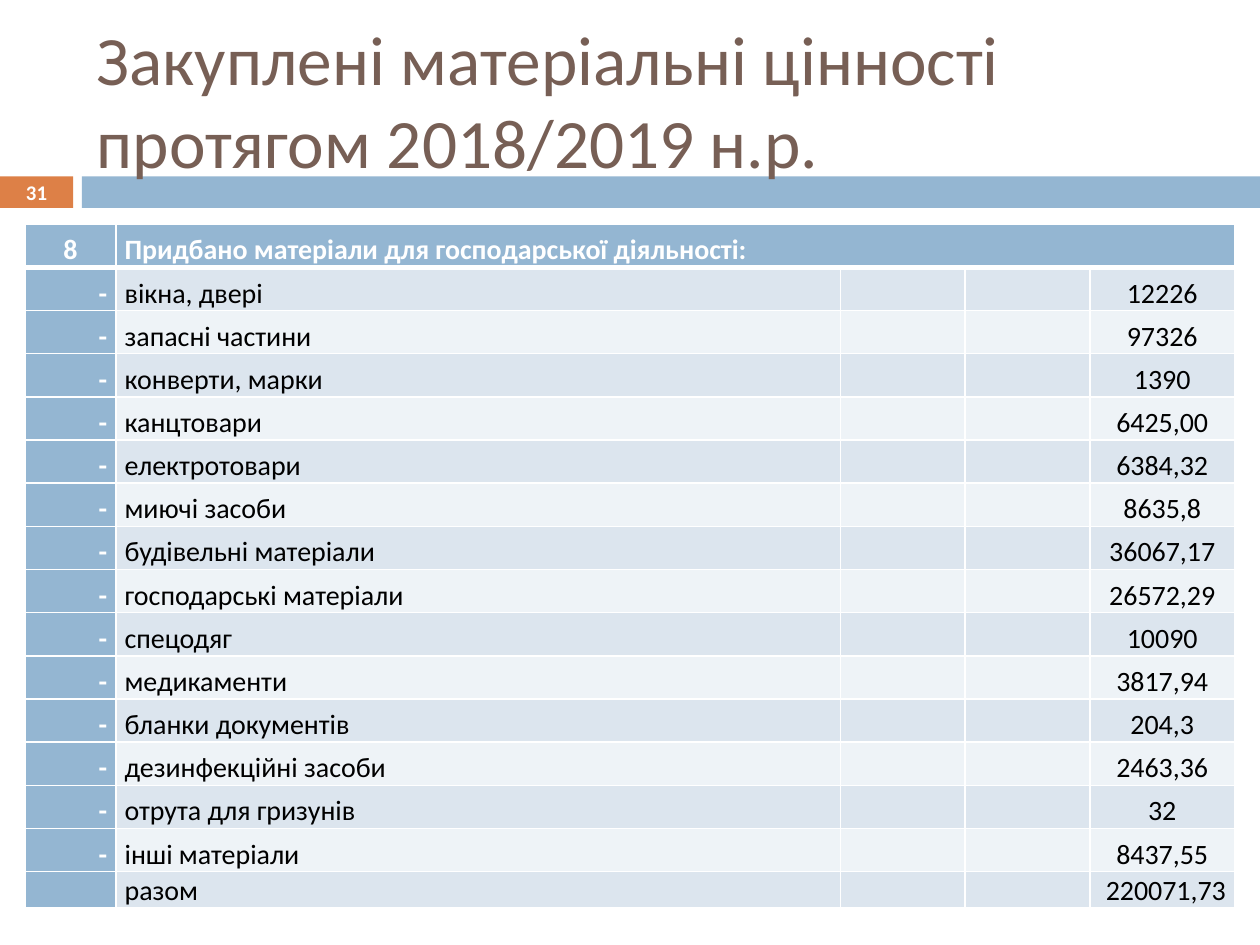
"""Build the slide that lists materials bought for upkeep in 2018/2019."""
from lxml.etree import SubElement
from pptx import Presentation
from pptx.dml.color import RGBColor
from pptx.enum.shapes import MSO_SHAPE
from pptx.enum.text import MSO_ANCHOR, PP_ALIGN
from pptx.oxml.ns import qn
from pptx.util import Inches, Pt

TITLE = "Закуплені матеріальні цінності протягом 2018/2019 н.р."
PAGE = "31"
HEAD = ("8", "Придбано матеріали для господарської діяльності:")
ITEMS = [
    ("вікна, двері", "12226"),
    ("запасні частини", "97326"),
    ("конверти, марки", "1390"),
    ("канцтовари", "6425,00"),
    ("електротовари", "6384,32"),
    ("миючі засоби", "8635,8"),
    ("будівельні матеріали", "36067,17"),
    ("господарські матеріали", "26572,29"),
    ("спецодяг", "10090"),
    ("медикаменти", "3817,94"),
    ("бланки документів", "204,3"),
    ("дезинфекційні засоби", "2463,36"),
    ("отрута для гризунів", "32"),
    ("інші матеріали", "8437,55"),
]
TOTAL = ("разом", "220071,73")
COLORS = {"blue": "94B6D2", "orange": "DD8047", "brown": "775F55", "white": "FFFFFF",
          "black": "000000", "odd": "DCE5EE", "even": "EEF3F7"}
COLS = (0.72, 5.75, 0.99, 0.99, 1.15)
HEIGHT, LAST = 5.43, 0.29
LEFT, MID, RIGHT = PP_ALIGN.LEFT, PP_ALIGN.CENTER, PP_ALIGN.RIGHT


def color(name):
    return RGBColor.from_string(COLORS[name])


def write(frame, text, size, tint, bold=False, align=LEFT):
    frame.text = text
    para = frame.paragraphs[0]
    para.alignment = align
    for run in para.runs:
        font = run.font
        font.name, font.size, font.bold = "Calibri", Pt(size), bold
        font.color.rgb = color(tint)
    if not text:
        SubElement(para._p, qn("a:endParaRPr"), sz=str(size * 100))


def add_bar(slide, left, width, tint):
    bar = slide.shapes.add_shape(MSO_SHAPE.RECTANGLE, Inches(left), Inches(1.4),
                                 Inches(width), Inches(0.25))
    bar.shadow.inherit = False
    bar.fill.solid()
    bar.fill.fore_color.rgb = color(tint)
    bar.line.fill.background()


def add_text(slide, box, text, size, tint, **style):
    frame = slide.shapes.add_textbox(*map(Inches, box)).text_frame
    frame.word_wrap = True
    frame.vertical_anchor = MSO_ANCHOR.MIDDLE
    write(frame, text, size, tint, **style)


def add_edge(cell, side, width):
    line = SubElement(cell._tc.get_or_add_tcPr(), qn("a:ln" + side), w=str(Pt(width)))
    SubElement(SubElement(line, qn("a:solidFill")), qn("a:srgbClr"), val=COLORS["white"])


def fill_cell(cell, row, col, text, align):
    lead = row == 0 or col == 0
    cell.margin_left = cell.margin_right = Inches(0.07)
    cell.margin_top = cell.margin_bottom = 0
    cell.vertical_anchor = MSO_ANCHOR.BOTTOM
    for side in "LRTB":
        thick = (row, side) in ((0, "B"), (1, "T"))
        add_edge(cell, side, 3 if thick else 1)
    cell.fill.solid()
    cell.fill.fore_color.rgb = color("blue" if lead else "odd" if row % 2 else "even")
    write(cell.text_frame, text, 16, "white" if lead else "black", lead, align)


def add_grid(slide):
    rows = [(*HEAD, "", "", "")]
    rows += [(" -", name, "", "", cost) for name, cost in ITEMS]
    rows.append(("", TOTAL[0], "", "", TOTAL[1]))
    end = len(rows) - 1
    grid = slide.shapes.add_table(len(rows), len(COLS), Inches(0.2), Inches(1.78),
                                  Inches(sum(COLS)), Inches(HEIGHT)).table
    for col, width in enumerate(COLS):
        grid.columns[col].width = Inches(width)
    for row, texts in enumerate(rows):
        grid.rows[row].height = Inches(LAST if row == end else (HEIGHT - LAST) / end)
        aligns = (RIGHT if row else MID, LEFT, LEFT, LEFT, RIGHT if row == end else MID)
        for col, (text, align) in enumerate(zip(texts, aligns)):
            fill_cell(grid.cell(row, col), row, col, text, align)
    grid.cell(0, 1).merge(grid.cell(0, len(COLS) - 1))


def main():
    deck = Presentation()
    deck.slide_width, deck.slide_height = Inches(10), Inches(7.5)
    slide = deck.slides.add_slide(deck.slide_layouts[6])
    add_bar(slide, 0, 0.58, "orange")
    add_bar(slide, 0.65, 9.35, "blue")
    add_text(slide, (0.67, 0.25, 8.92, 1.08), TITLE, 39.6, "brown")
    add_text(slide, (0, 1.39, 0.58, 0.27), PAGE, 11.9, "white", bold=True, align=MID)
    add_grid(slide)
    deck.save("out.pptx")


if __name__ == "__main__":
    main()
